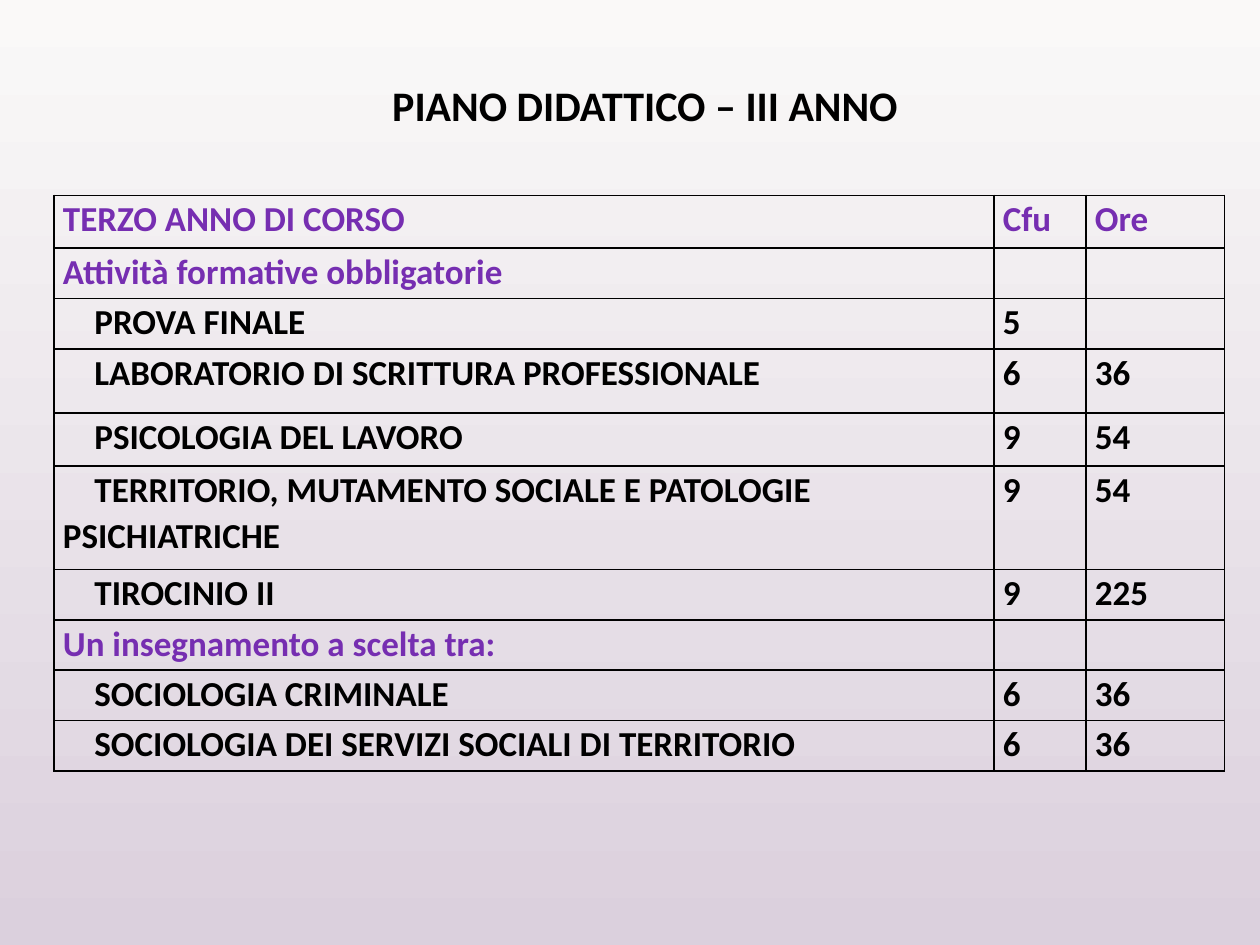
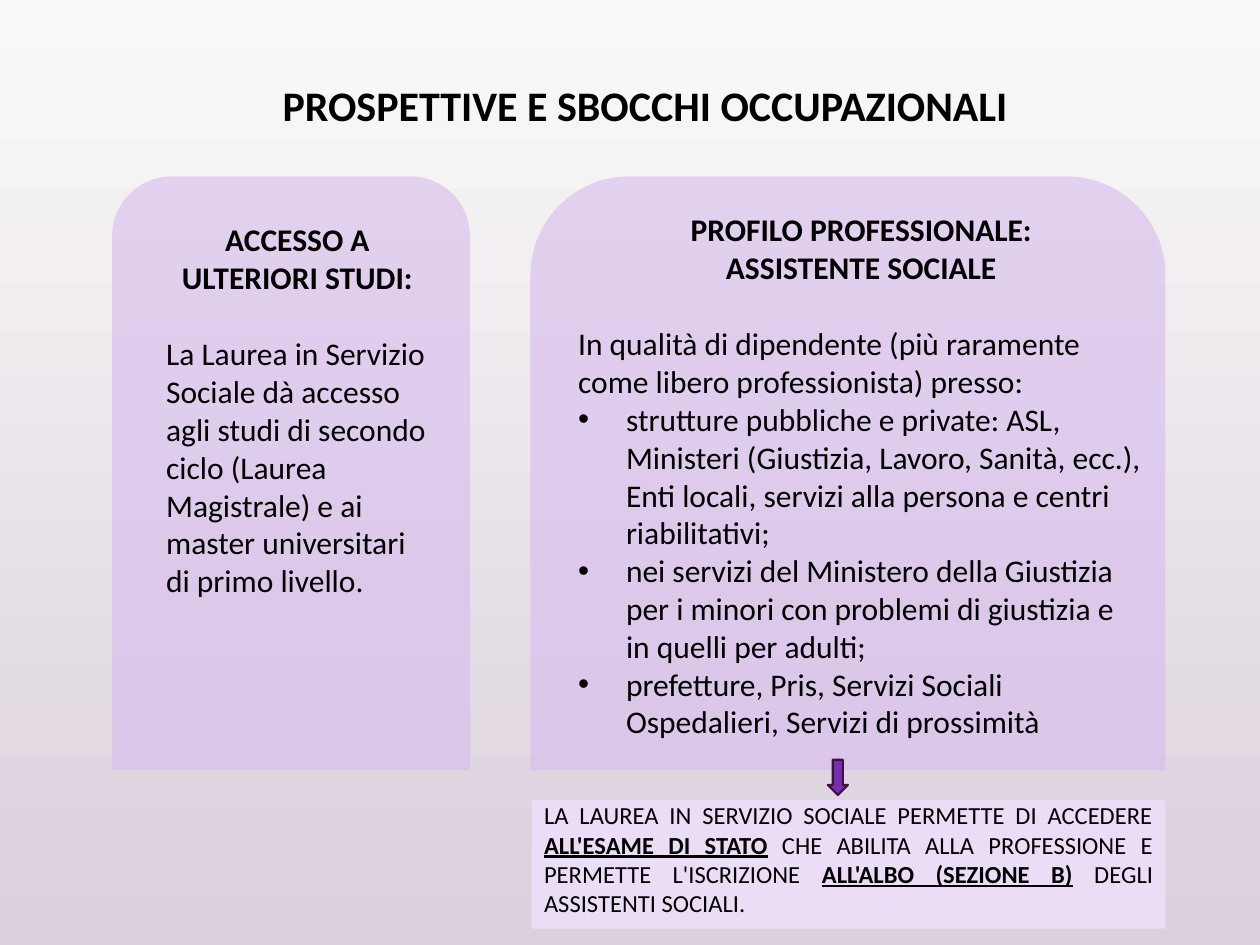
from lxml.etree import SubElement
from pptx import Presentation
from pptx.dml.color import RGBColor
from pptx.enum.shapes import MSO_SHAPE
from pptx.enum.text import MSO_ANCHOR, PP_ALIGN
from pptx.oxml import parse_xml
from pptx.oxml.ns import nsdecls, qn
from pptx.util import Inches, Pt

BLACK, PURPLE, LILAC = "000000", "762EB1", "D7BCED"
BACKGROUND = ["FAF9F8", "DBD0DD"]
TITLES = ["PIANO DIDATTICO – III ANNO", "PROSPETTIVE E SBOCCHI OCCUPAZIONALI"]


def paint(color_format, value):
    color_format.rgb = RGBColor.from_string(value)


def write(para, text, size, color=BLACK, layout=None, **style):
    """Add a styled run to a paragraph and apply the layout values to it."""
    for name, value in (layout or {}).items():
        setattr(para, name, value)
    span = para.add_run()
    span.text = text
    for name, value in {"name": "Calibri", "size": Pt(size), **style}.items():
        setattr(span.font, name, value)
    paint(span.font.color, color)


deck = Presentation()
deck.slide_width, deck.slide_height = Inches(10), Inches(7.5)
centered = {"alignment": PP_ALIGN.CENTER}

# Shared background and title
pages = []
for title in TITLES:
    page = deck.slides.add_slide(deck.slide_layouts[6])
    fill = page.background.fill
    fill.gradient()
    fill.gradient_angle = 270
    for stop, color in zip(fill.gradient_stops, BACKGROUND):
        paint(stop.color, color)
    box = page.shapes.add_textbox(Inches(0.59), Inches(0.68), Inches(9.06), Inches(0.71))
    box.text_frame.word_wrap = True
    write(box.text_frame.paragraphs[0], title, 24, bold=True,
          layout={**centered, "line_spacing": Pt(22)})
    pages.append(page)
plan_page, careers_page = pages

# Study plan table: text, credits, hours, row height
plan = [
    ("TERZO ANNO DI CORSO", "Cfu", "Ore", 0.42),
    ("Attività formative obbligatorie", "", "", 0.4),
    ("PROVA FINALE", "5", "", 0.4),
    ("LABORATORIO DI SCRITTURA PROFESSIONALE", "6", "36", 0.51),
    ("PSICOLOGIA DEL LAVORO", "9", "54", 0.42),
    ("TERRITORIO, MUTAMENTO SOCIALE E PATOLOGIE PSICHIATRICHE", "9", "54", 0.82),
    ("TIROCINIO II", "9", "225", 0.4),
    ("Un insegnamento a scelta tra:", "", "", 0.4),
    ("SOCIOLOGIA CRIMINALE", "6", "36", 0.4),
    ("SOCIOLOGIA DEI SERVIZI SOCIALI DI TERRITORIO", "6", "36", 0.4),
]
heading_rows = {0, 1, 7}
table = plan_page.shapes.add_table(len(plan), 3, Inches(0.43), Inches(1.55),
                                   Inches(9.29), Inches(4.59)).table
table.first_row = table.horz_banding = False
for column, width in zip(table.columns, [7.46, 0.73, 1.1]):
    column.width = Inches(width)
cell_format = {"margin_left": Inches(0.07), "margin_right": Inches(0.07),
               "margin_top": 0, "margin_bottom": 0}
for row_index, (*texts, height) in enumerate(plan):
    table.rows[row_index].height = Inches(height)
    is_heading = row_index in heading_rows
    for column_index, text in enumerate(texts):
        cell = table.cell(row_index, column_index)
        for name, value in cell_format.items():
            setattr(cell, name, value)
        cell.fill.background()
        properties = cell._tc.get_or_add_tcPr()
        for position, side in enumerate(["lnL", "lnR", "lnT", "lnB"]):
            properties.insert(position, parse_xml(
                f'<a:{side} {nsdecls("a")} w="12700"><a:solidFill>'
                f'<a:srgbClr val="{BLACK}"/></a:solidFill></a:{side}>'))
        para = cell.text_frame.paragraphs[0]
        if not text:
            para.font.size = Pt(18)
            continue
        if column_index == 0 and not is_heading:
            para._p.get_or_add_pPr().set("indent", str(Inches(0.25)))
        write(para, text, 20, PURPLE if is_heading else BLACK, bold=True,
              layout={"line_spacing": 1.07, "space_after": Pt(8)})

# Career panels
for left, width in [(0.89, 2.84), (4.21, 5.04)]:
    panel = careers_page.shapes.add_shape(MSO_SHAPE.ROUND_2_SAME_RECTANGLE, Inches(left),
                                          Inches(1.4), Inches(width), Inches(4.71))
    panel.shadow.inherit = False
    panel.fill.solid()
    paint(panel.fill.fore_color, LILAC)
    color = panel._element.spPr.find(".//" + qn("a:srgbClr"))
    SubElement(color, qn("a:alpha"), val="61000")
    panel.line.fill.background()

# Panel texts: place, headings, introduction, bullets
panel_texts = [
    ((1.22, 1.7, 2.28, 3.74), ["ACCESSO A ULTERIORI STUDI:"],
     "La Laurea in Servizio Sociale dà accesso agli studi di secondo ciclo "
     "(Laurea Magistrale) e ai master universitari di primo livello.", []),
    ((4.49, 1.62, 4.69, 4.95), ["PROFILO PROFESSIONALE:", "ASSISTENTE SOCIALE"],
     "In qualità di dipendente (più raramente come libero professionista) presso:",
     ["strutture pubbliche e private: ASL, Ministeri (Giustizia, Lavoro, Sanità, ecc.), "
      "Enti locali, servizi alla persona e centri riabilitativi;",
      "nei servizi del Ministero della Giustizia per i minori con problemi di giustizia "
      "e in quelli per adulti;",
      "prefetture, Pris, Servizi Sociali Ospedalieri, Servizi di prossimità"]),
]
for place, headings, introduction, bullets in panel_texts:
    frame = careers_page.shapes.add_textbox(*map(Inches, place)).text_frame
    frame.word_wrap = True
    for index, heading in enumerate(headings):
        para = frame.add_paragraph() if index else frame.paragraphs[0]
        write(para, heading, 18, bold=True, layout=centered)
    write(frame.add_paragraph(), introduction, 18, layout={"space_before": Pt(22)})
    for bullet in bullets:
        para = frame.add_paragraph()
        properties = para._p.get_or_add_pPr()
        properties.set("marL", str(Inches(0.38)))
        properties.set("indent", str(Inches(-0.38)))
        SubElement(properties, qn("a:buFont"), typeface="Arial")
        SubElement(properties, qn("a:buChar"), char="•")
        write(para, bullet, 18)

# State exam note
note = careers_page.shapes.add_shape(MSO_SHAPE.RECTANGLE, Inches(4.22), Inches(6.35),
                                     Inches(5.03), Inches(1.02))
note.shadow.inherit = False
note.fill.solid()
paint(note.fill.fore_color, "EBDDF6")
note.line.fill.background()
frame = note.text_frame
frame.word_wrap = True
frame.vertical_anchor = MSO_ANCHOR.TOP
frame.margin_top = frame.margin_bottom = 0
note_spans = [
    ("LA LAUREA IN SERVIZIO SOCIALE PERMETTE DI ACCEDERE ", False),
    ("ALL'ESAME DI STATO", True),
    (" CHE ABILITA ALLA PROFESSIONE E PERMETTE L'ISCRIZIONE ", False),
    ("ALL'ALBO (SEZIONE B)", True),
    (" DEGLI ASSISTENTI SOCIALI.", False),
]
for text, strong in note_spans:
    write(frame.paragraphs[0], text, 14, bold=strong, underline=strong,
          layout={"alignment": PP_ALIGN.JUSTIFY})

# Arrow from the profile to the note
arrow = careers_page.shapes.add_shape(MSO_SHAPE.DOWN_ARROW, Inches(6.57), Inches(6.03),
                                      Inches(0.16), Inches(0.28))
arrow.shadow.inherit = False
arrow.fill.solid()
paint(arrow.fill.fore_color, PURPLE)
paint(arrow.line.color, "40113F")
arrow.line.width = Pt(1.25)

deck.save("out.pptx")
